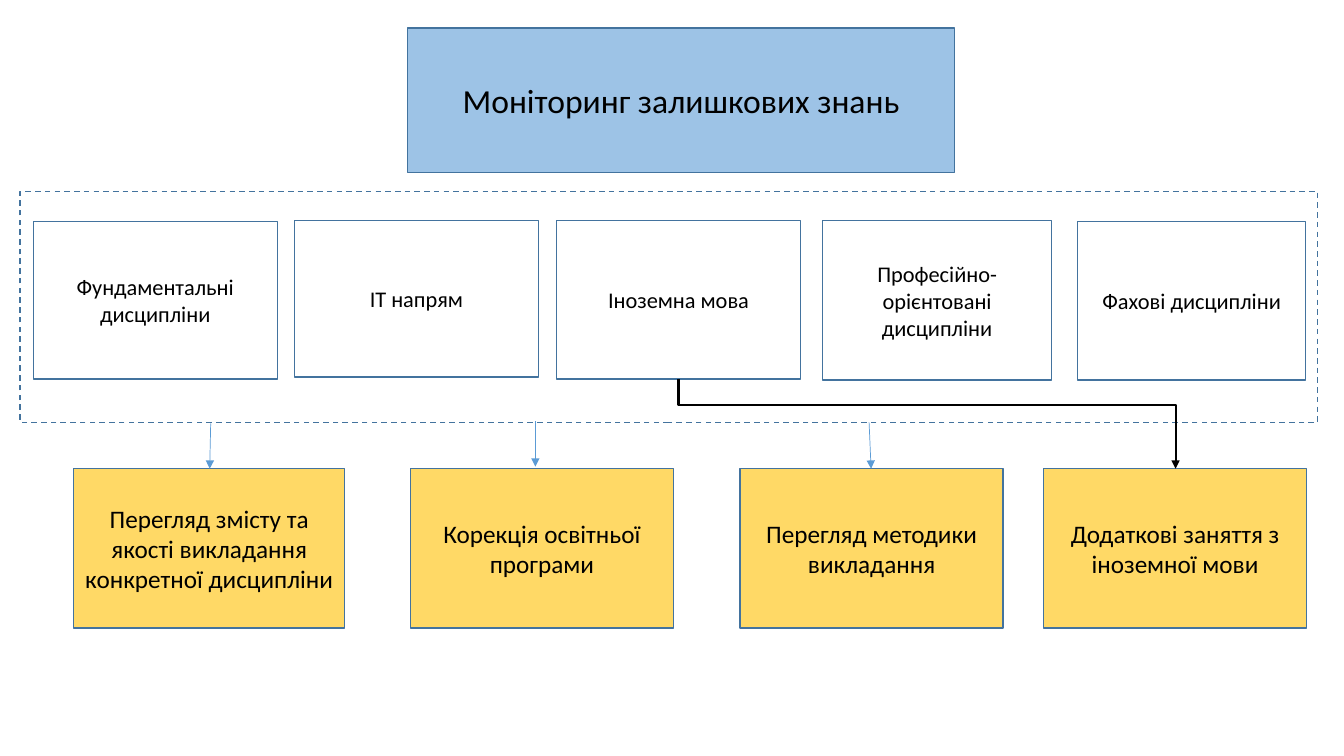
from lxml import etree
from pptx import Presentation
from pptx.dml.color import RGBColor
from pptx.enum.dml import MSO_LINE
from pptx.enum.shapes import MSO_CONNECTOR, MSO_SHAPE
from pptx.enum.text import MSO_ANCHOR, PP_ALIGN
from pptx.oxml.ns import qn
from pptx.util import Inches, Pt

RECTANGLE = MSO_SHAPE.RECTANGLE
STRAIGHT, ELBOW = MSO_CONNECTOR.STRAIGHT, MSO_CONNECTOR.ELBOW
DASH = MSO_LINE.DASH
MIDDLE, CENTER = MSO_ANCHOR.MIDDLE, PP_ALIGN.CENTER

WHITE, BLACK, BORDER = "FFFFFF", "000000", "43739E"
TITLE_FILL, ACTION_FILL, ARROW = "9DC3E6", "FFD966", "5B9BD5"

SUBJECT_PANEL = (0.2, 1.9, 12.87, 2.29)
ACTION_ROW = (0.73, 4.65, 12.23, 1.58)
SUBJECTS = [
    ("Фундаментальні дисципліни", 0.13, 0.3, 2.42, 1.56),
    ("ІТ напрям", 2.72, 0.29, 2.42, 1.55),
    ("Іноземна мова", 5.32, 0.29, 2.42, 1.57),
    ("Професійно-орієнтовані дисципліни", 7.96, 0.29, 2.27, 1.58),
    ("Фахові дисципліни", 10.49, 0.3, 2.26, 1.57),
]
ACTIONS = [
    ("Перегляд змісту та якості викладання конкретної дисципліни", 0, 2.69),
    ("Корекція освітньої програми", 3.34, 2.61),
    ("Перегляд методики викладання", 6.61, 2.61),
    ("Додаткові заняття з іноземної мови", 9.62, 2.61),
]
PANEL_ARROWS = [
    (2.09, 4.2, 2.08, 4.65),
    (5.31, 4.18, 5.31, 4.63),
    (8.62, 4.19, 8.64, 4.65),
]
LANGUAGE_ARROW = (6.73, 3.76, 11.66, 4.65)
LANGUAGE_BEND = 0.287


def color(value):
    """Turn a hex string into a colour."""
    return RGBColor.from_string(value)


def add_box(slide, box, fill, text="", size=16):
    """Add a bordered rectangle with centred text."""
    shape = slide.shapes.add_shape(RECTANGLE, *map(Inches, box))
    shape.shadow.inherit = False
    shape.fill.solid()
    shape.fill.fore_color.rgb = color(fill)
    shape.line.color.rgb = color(BORDER)
    shape.line.width = Pt(1)
    frame = shape.text_frame
    frame.word_wrap = True
    frame.vertical_anchor = MIDDLE
    paragraph = frame.paragraphs[0]
    paragraph.text = text
    paragraph.alignment = CENTER
    paragraph.font.name = "Calibri"
    paragraph.font.size = Pt(size)
    paragraph.font.color.rgb = color(BLACK)
    return shape


def add_arrow(slide, kind, ends, line_color, width):
    """Add a connector with a triangular head at its end."""
    connector = slide.shapes.add_connector(kind, *map(Inches, ends))
    connector.line.color.rgb = color(line_color)
    connector.line.width = Pt(width)
    etree.SubElement(connector.line._get_or_add_ln(), qn("a:tailEnd"), type="triangle")
    etree.SubElement(connector._element.spPr, qn("a:effectLst"))
    return connector


def add_down_elbow(slide, ends, bend):
    """Add an arrow that runs down, across and down again."""
    start_x, start_y, end_x, end_y = ends
    middle_x, middle_y = (start_x + end_x) / 2, (start_y + end_y) / 2
    half_width, half_height = (end_y - start_y) / 2, (end_x - start_x) / 2
    unrotated = (middle_x + half_width, middle_y - half_height,
                 middle_x - half_width, middle_y + half_height)
    connector = add_arrow(slide, ELBOW, unrotated, BLACK, 1.5)
    properties = connector._element.spPr
    properties.find(qn("a:xfrm")).set("rot", str(270 * 60000))
    adjustments = properties.find(qn("a:prstGeom")).find(qn("a:avLst"))
    etree.SubElement(adjustments, qn("a:gd"), name="adj1",
                     fmla=f"val {round(bend * 100000)}")


def add_subjects(slide, box):
    """Add the dashed panel and the subject boxes inside it."""
    left, top = box[:2]
    add_box(slide, box, WHITE).line.dash_style = DASH
    for text, x, y, width, height in SUBJECTS:
        add_box(slide, (left + x, top + y, width, height), WHITE, text)


def add_actions(slide, box):
    """Add the row of follow-up actions."""
    left, top, _, height = box
    for text, x, width in ACTIONS:
        add_box(slide, (left + x, top, width, height), ACTION_FILL, text, 18)


def add_arrows(slide):
    """Add the arrows leading from subjects to actions."""
    for ends in PANEL_ARROWS:
        add_arrow(slide, STRAIGHT, ends, ARROW, 0.5)
    add_down_elbow(slide, LANGUAGE_ARROW, LANGUAGE_BEND)


def main():
    """Build and save the presentation."""
    presentation = Presentation()
    presentation.slide_width = Inches(13.33)
    presentation.slide_height = Inches(7.5)
    slide = presentation.slides.add_slide(presentation.slide_layouts[6])
    add_subjects(slide, SUBJECT_PANEL)
    add_box(slide, (4.04, 0.28, 5.43, 1.43), TITLE_FILL, "Моніторинг залишкових знань", 24)
    add_actions(slide, ACTION_ROW)
    add_arrows(slide)
    presentation.save("out.pptx")


if __name__ == "__main__":
    main()
